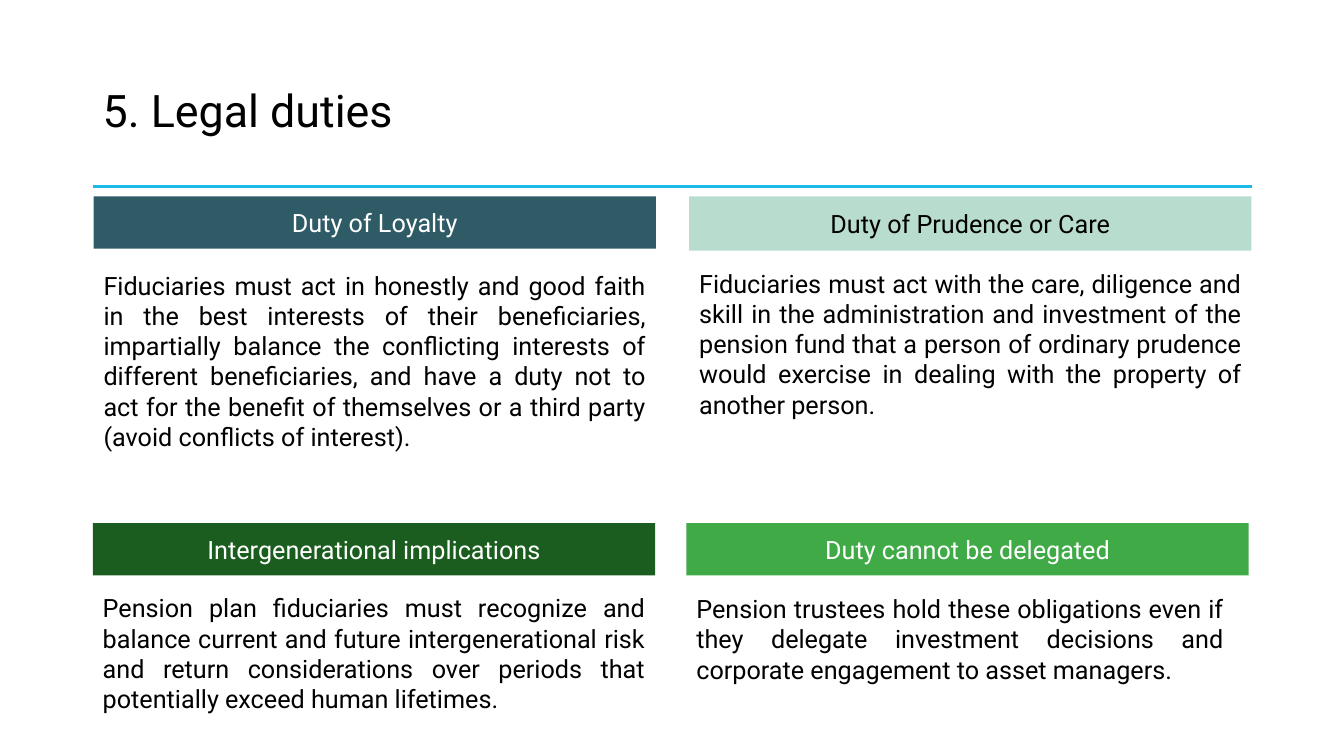
from lxml.etree import SubElement
from pptx import Presentation
from pptx.dml.color import RGBColor
from pptx.enum.shapes import MSO_CONNECTOR, MSO_SHAPE
from pptx.enum.text import MSO_ANCHOR, PP_ALIGN
from pptx.oxml.ns import qn
from pptx.util import Cm, Pt

BLACK, WHITE = "000000", "FFFFFF"
TITLE_FORMAT = {"line_spacing": 0.9}
HEADING_FORMAT = {"alignment": PP_ALIGN.CENTER, "space_after": Pt(6)}
BODY_FORMAT = {"alignment": PP_ALIGN.JUSTIFY, "space_after": Pt(6)}

# Heading box (left, top, width, height), fill, text colour, heading,
# then body box (offset below heading top, width, height) and body text
DUTIES = [
    ((2.36, 4.95, 14.17, 1.32), "2E5B66", WHITE, "Duty of Loyalty",
     (1.73, 14.17, 4.88),
     "Fiduciaries must act in honestly and good faith in the best interests of "
     "their beneficiaries, impartially balance the conflicting interests of "
     "different beneficiaries, and have a duty not to act for the benefit of "
     "themselves or a third party (avoid conflicts of interest)."),
    ((17.37, 4.95, 14.17, 1.37), "B8DCCD", BLACK, "Duty of Prudence or Care",
     (1.68, 14.17, 4.11),
     "Fiduciaries must act with the care, diligence and skill in the "
     "administration and investment of the pension fund that a person of "
     "ordinary prudence would exercise in dealing with the property of another "
     "person."),
    ((2.34, 13.18, 14.17, 1.32), "1B5D1E", WHITE, "Intergenerational implications",
     (1.63, 14.17, 3.33),
     "Pension plan fiduciaries must recognize and balance current and future "
     "intergenerational risk and return considerations over periods that "
     "potentially exceed human lifetimes."),
    ((17.3, 13.18, 14.17, 1.32), "40AA47", WHITE, "Duty cannot be delegated",
     (1.65, 13.79, 2.57),
     "Pension trustees hold these obligations even if they delegate investment "
     "decisions and corporate engagement to asset managers."),
]


def color(value):
    return RGBColor.from_string(value)


def set_all(target, values):
    for name, value in values.items():
        setattr(target, name, value)


def write(shape, text, size, ink, para_format, anchor=MSO_ANCHOR.MIDDLE):
    set_all(shape.text_frame, {"word_wrap": True, "vertical_anchor": anchor})
    para = shape.text_frame.paragraphs[0]
    set_all(para, para_format)
    span = para.add_run()
    span.text = text
    set_all(span.font, {"name": "Roboto", "size": Pt(size)})
    span.font.color.rgb = color(ink)


def add_header(page, left, top, width, height):
    # Title
    title = page.shapes.add_textbox(Cm(left), Cm(top), Cm(width), Cm(height))
    write(title, "5. Legal duties", 32, BLACK, TITLE_FORMAT)

    # Rule under the title
    bottom = Cm(top + height)
    rule = page.shapes.add_connector(
        MSO_CONNECTOR.STRAIGHT, Cm(left), bottom, Cm(left + width), bottom)
    rule.line.color.rgb = color("1CBAE9")
    rule.line.width = Pt(1.5)
    SubElement(rule.element.spPr, qn("a:effectLst"))


def add_duty(page, box, fill, ink, heading, body_box, body):
    left, top, width, height = box

    # Coloured heading bar
    bar = page.shapes.add_shape(
        MSO_SHAPE.RECTANGLE, Cm(left), Cm(top), Cm(width), Cm(height))
    bar.shadow.inherit = False
    bar.fill.solid()
    bar.fill.fore_color.rgb = color(fill)
    bar.line.fill.background()
    write(bar, heading, 18, ink, HEADING_FORMAT)

    # Explanation
    offset, body_width, body_height = body_box
    explanation = page.shapes.add_textbox(
        Cm(left), Cm(top + offset), Cm(body_width), Cm(body_height))
    write(explanation, body, 18, BLACK, BODY_FORMAT, MSO_ANCHOR.TOP)


def main():
    deck = Presentation()
    set_all(deck, {"slide_width": Cm(33.87), "slide_height": Cm(19.05)})
    page = deck.slides.add_slide(deck.slide_layouts[6])
    add_header(page, 2.34, 1.02, 29.21, 3.68)
    for duty in DUTIES:
        add_duty(page, *duty)
    deck.save("out.pptx")


if __name__ == "__main__":
    main()
